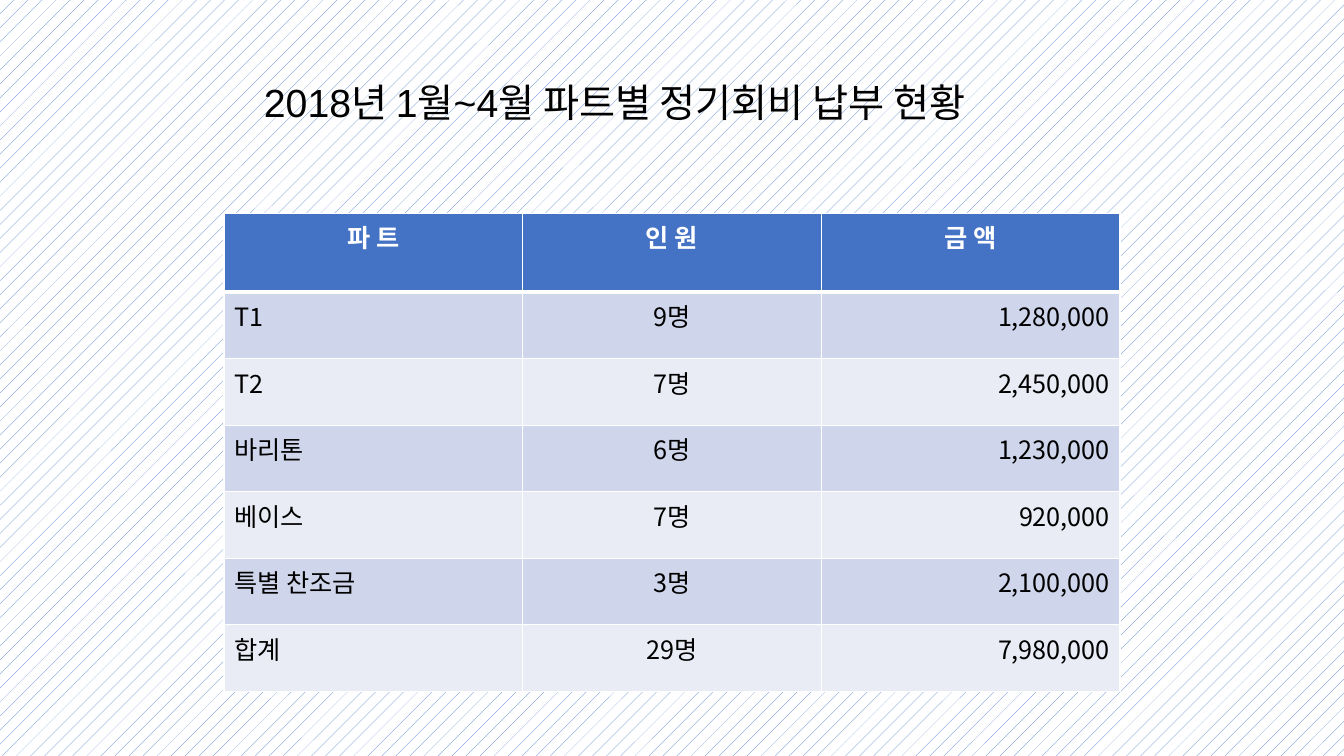
import dataclasses
import typing

import lxml.etree
import pptx
import pptx.dml.color
import pptx.enum.dml
import pptx.enum.text
import pptx.oxml.ns
import pptx.util

SLIDE_WIDTH = pptx.util.Inches(13.33)
SLIDE_HEIGHT = pptx.util.Inches(7.5)
EAST_ASIAN_FONT = "Noto Sans CJK KR"
COLOURS = {
    "accent": "4472C4",
    "white": "FFFFFF",
    "black": "000000",
    "odd_row": "CFD5EA",
    "even_row": "E9EBF5",
}
TITLE_FORMAT = {"name": "Arial", "size": pptx.util.Pt(28)}
HEADER_FORMAT = {"name": EAST_ASIAN_FONT, "size": pptx.util.Pt(18), "bold": True}
BODY_FORMAT = {**HEADER_FORMAT, "bold": False}
ALIGN = pptx.enum.text.PP_ALIGN
BODY_ALIGNMENTS = (ALIGN.LEFT, ALIGN.CENTER, ALIGN.RIGHT)
THIN, THICK = 1, 3


@dataclasses.dataclass(frozen=True)
class Area:
    """A rectangle in shares of the slide's width and height."""

    left: float
    top: float
    width: float
    height: float

    def lengths(self) -> tuple[int, int, int, int]:
        return (
            int(self.left * SLIDE_WIDTH),
            int(self.top * SLIDE_HEIGHT),
            int(self.width * SLIDE_WIDTH),
            int(self.height * SLIDE_HEIGHT),
        )


@dataclasses.dataclass(frozen=True)
class PartDues:
    part: str
    members: str
    amount: str


HEADER = PartDues("파 트", "인 원", "금 액")
DUES = [
    PartDues("T1", "9명", "1,280,000"),
    PartDues("T2", "7명", "2,450,000"),
    PartDues("바리톤", "6명", "1,230,000"),
    PartDues("베이스", "7명", "920,000"),
    PartDues("특별 찬조금", "3명", "2,100,000"),
    PartDues("합계", "29명", "7,980,000"),
]
HEADER_ROW_SHARE = 0.78 / 7.5
BODY_ROW_SHARE = 0.66 / 7.5
TITLE_AREA = Area(2.52 / 13.33, 0.73 / 7.5, 7.96 / 13.33, 0.57 / 7.5)
TABLE_AREA = Area(1 / 6, 2.12 / 7.5, 2 / 3, HEADER_ROW_SHARE + len(DUES) * BODY_ROW_SHARE)


def rgb(colour: str) -> pptx.dml.color.RGBColor:
    return pptx.dml.color.RGBColor.from_string(COLOURS[colour])


def write_text(paragraph: typing.Any, text: str, colour: str, font_format: dict[str, typing.Any]) -> None:
    run = paragraph.add_run()
    run.text = text
    for attribute, value in font_format.items():
        setattr(run.font, attribute, value)
    run.font.color.rgb = rgb(colour)
    latin = run.font._element.find(pptx.oxml.ns.qn("a:latin"))
    east_asian = latin.makeelement(pptx.oxml.ns.qn("a:ea"), {"typeface": EAST_ASIAN_FONT})
    latin.addnext(east_asian)


def add_borders(cell: typing.Any, widths: dict[str, int]) -> None:
    """Give the cell white edges; call this before its fill is set."""
    properties = cell._tc.get_or_add_tcPr()
    for side, width in widths.items():
        line = lxml.etree.SubElement(
            properties, pptx.oxml.ns.qn(f"a:ln{side}"), {"w": str(pptx.util.Pt(width))}
        )
        fill = lxml.etree.SubElement(line, pptx.oxml.ns.qn("a:solidFill"))
        lxml.etree.SubElement(fill, pptx.oxml.ns.qn("a:srgbClr"), {"val": COLOURS["white"]})


def paint_background(slide: typing.Any) -> None:
    fill = slide.background.fill
    fill.patterned()
    fill.pattern = pptx.enum.dml.MSO_PATTERN.PERCENT_5
    fill.fore_color.rgb = rgb("accent")
    fill.back_color.rgb = rgb("white")


def add_title(slide: typing.Any) -> None:
    frame = slide.shapes.add_textbox(*TITLE_AREA.lengths()).text_frame
    frame.word_wrap = False
    frame.auto_size = pptx.enum.text.MSO_AUTO_SIZE.SHAPE_TO_FIT_TEXT
    write_text(frame.paragraphs[0], "2018년 1월~4월 파트별 정기회비 납부 현황", "black", TITLE_FORMAT)


def add_dues_table(slide: typing.Any) -> None:
    records = [HEADER, *DUES]
    column_count = len(BODY_ALIGNMENTS)
    table = slide.shapes.add_table(len(records), column_count, *TABLE_AREA.lengths()).table
    for row_index, record in enumerate(records):
        is_header = row_index == 0
        share = HEADER_ROW_SHARE if is_header else BODY_ROW_SHARE
        table.rows[row_index].height = int(share * SLIDE_HEIGHT)
        band = "accent" if is_header else "odd_row" if row_index % 2 else "even_row"
        borders = {
            "L": THIN,
            "R": THIN,
            "T": THICK if row_index == 1 else THIN,
            "B": THICK if is_header else THIN,
        }
        for column_index, text in enumerate(dataclasses.astuple(record)):
            cell = table.cell(row_index, column_index)
            add_borders(cell, borders)
            cell.fill.solid()
            cell.fill.fore_color.rgb = rgb(band)
            paragraph = cell.text_frame.paragraphs[0]
            paragraph.alignment = ALIGN.CENTER if is_header else BODY_ALIGNMENTS[column_index]
            write_text(
                paragraph,
                text,
                "white" if is_header else "black",
                HEADER_FORMAT if is_header else BODY_FORMAT,
            )


def main() -> None:
    presentation = pptx.Presentation()
    presentation.slide_width = SLIDE_WIDTH
    presentation.slide_height = SLIDE_HEIGHT
    slide = presentation.slides.add_slide(presentation.slide_layouts[6])
    paint_background(slide)
    add_dues_table(slide)
    add_title(slide)
    presentation.save("out.pptx")


if __name__ == "__main__":
    main()
